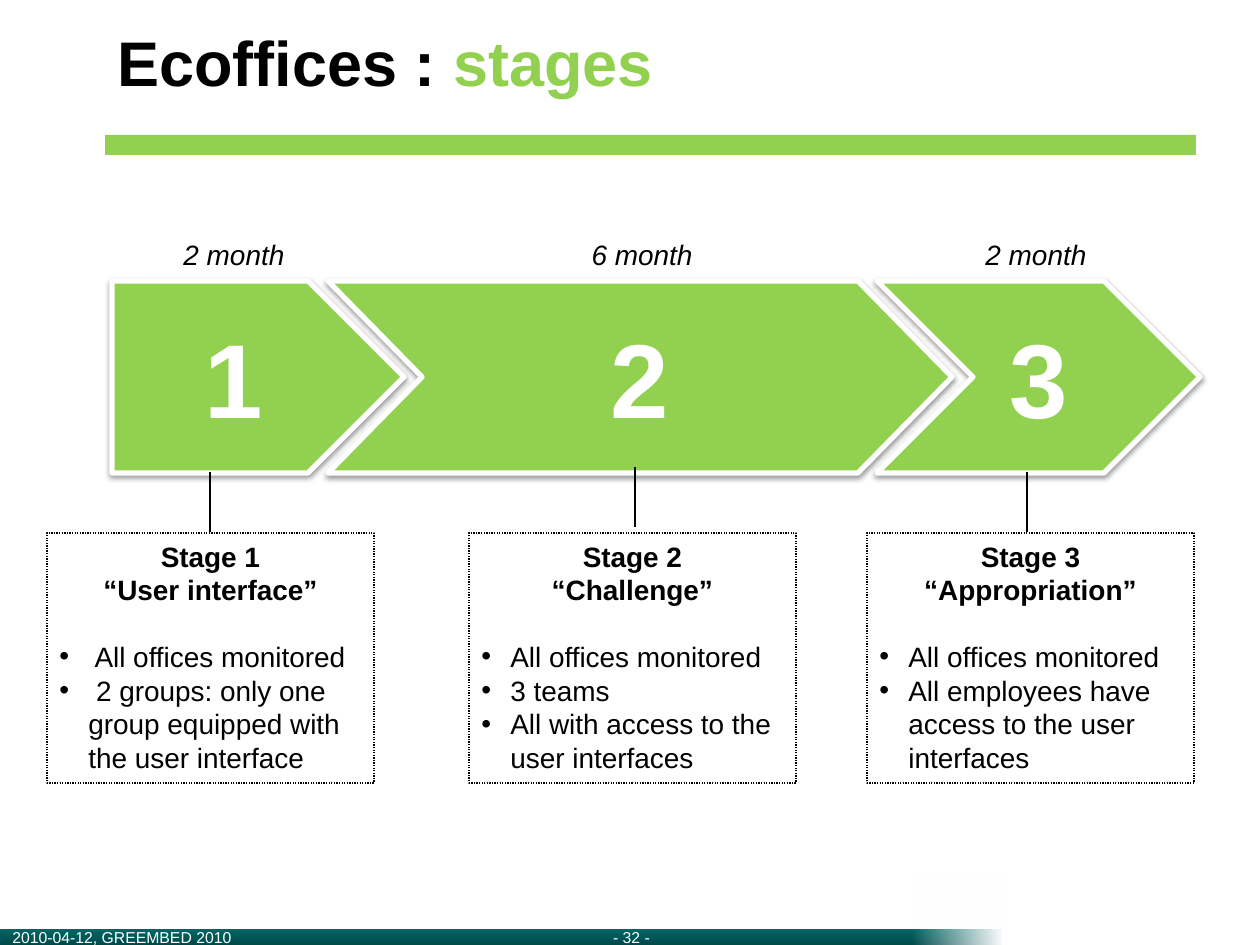
import pptx
import pptx.util
import pptx.dml.color
import pptx.enum.dml
import pptx.enum.shapes
import pptx.enum.text
import pptx.oxml
import pptx.oxml.ns

GREEN, WHITE, BLACK = "92D050", "FFFFFF", "000000"
SHAPE = pptx.enum.shapes.MSO_SHAPE
ALIGN = pptx.enum.text.PP_ALIGN
MIDDLE = pptx.enum.text.MSO_ANCHOR.MIDDLE
NAMESPACE = pptx.oxml.ns.nsdecls("a")

TITLE = [("Ecoffices : ", BLACK), ("stages", GREEN)]
FOOTER = "2010-04-12, GREEMBED 2010\t- 32 -"
STAGES = [
    {"number": "1", "duration": "2 month", "name": "“User interface”",
     "outline": SHAPE.PENTAGON, "adjust": 0.5, "arrow": (112, 292),
     "duration_center": 234, "link": (210, 472), "card_left": 47,
     "points": [" All offices monitored",
                " 2 groups: only one group equipped with the user interface"]},
    {"number": "2", "duration": "6 month", "name": "“Challenge”",
     "outline": SHAPE.CHEVRON, "adjust": 0.49, "arrow": (328, 624),
     "duration_center": 642, "link": (635, 467), "card_left": 469,
     "points": ["All offices monitored", "3 teams",
                "All with access to the user interfaces"]},
    {"number": "3", "duration": "2 month", "name": "“Appropriation”",
     "outline": SHAPE.CHEVRON, "adjust": 0.5, "arrow": (877, 323),
     "duration_center": 1036, "link": (1027, 472), "card_left": 867,
     "points": ["All offices monitored",
                "All employees have access to the user interfaces"]},
]
ARROW_TOP, ARROW_HEIGHT = 281, 192
DURATION_TOP, DURATION_WIDTH, DURATION_HEIGHT = 231, 127, 47
CARD_TOP, CARD_WIDTH, CARD_HEIGHT = 533, 327, 250
LINK_LENGTH, BULLET_INDENT = 60, 29


def px(length):
    return pptx.util.Emu(round(length * 914400 / 126))


def color(value):
    return pptx.dml.color.RGBColor.from_string(value)


def add_box(slide, place, outline=SHAPE.RECTANGLE, fill=None):
    box = slide.shapes.add_shape(outline, *map(px, place))
    box.shadow.inherit = False
    box.line.fill.background()
    if fill:
        box.fill.solid()
        box.fill.fore_color.rgb = color(fill)
    else:
        box.fill.background()
    box.text_frame.word_wrap = True
    return box


def add_gradient(slide, place, stops, angle):
    box = add_box(slide, place, fill=WHITE)
    box.fill.gradient()
    box.fill.gradient_angle = angle
    for stop, (position, value) in zip(box.fill.gradient_stops, stops):
        stop.position = position
        stop.color.rgb = color(value)
    return box


def write(para, text, size, fill=BLACK, align=ALIGN.LEFT, **style):
    para.alignment = align
    span = para.add_run()
    span.text = text
    span.font.color.rgb = color(fill)
    values = {"name": "Arial", "size": pptx.util.Pt(size), **style}
    for name, value in values.items():
        setattr(span.font, name, value)


def add_soft_shadow(box):
    effects = box._element.spPr.find(pptx.oxml.ns.qn("a:effectLst"))
    effects.append(pptx.oxml.parse_xml(
        f'<a:outerShdw {NAMESPACE} blurRad="40000" dist="20000" dir="5400000" '
        'rotWithShape="0"><a:srgbClr val="000000"><a:alpha val="38000"/>'
        '</a:srgbClr></a:outerShdw>'))


def set_bullet(para):
    props = para._p.get_or_add_pPr()
    props.set("marL", str(px(BULLET_INDENT)))
    props.set("indent", str(-px(BULLET_INDENT)))
    for tag in ('buFont %s typeface="Arial"', 'buChar %s char="•"'):
        props.append(pptx.oxml.parse_xml(f"<a:{tag % NAMESPACE}/>"))


def add_footer(slide):
    bar = add_gradient(slide, (0, 929, 1126, 16),
                       [(0, "006666"), (1, "004949")], 270)
    bar.text_frame.vertical_anchor = MIDDLE
    para = bar.text_frame.paragraphs[0]
    para._p.get_or_add_pPr().append(pptx.oxml.parse_xml(
        f'<a:tabLst {NAMESPACE}><a:tab pos="{px(619)}" algn="ctr"/></a:tabLst>'))
    write(para, FOOTER, 9, WHITE)
    add_box(slide, (1002, 785, 258, 160), fill=WHITE)
    fade = add_gradient(slide, (912, 874, 91, 71), [(0, WHITE), (1, WHITE)], 0)
    first_color = next(fade._element.spPr.iter(pptx.oxml.ns.qn("a:srgbClr")))
    first_color.append(pptx.oxml.parse_xml(f'<a:alpha {NAMESPACE} val="0"/>'))


def add_title(slide):
    add_box(slide, (105, 135, 1091, 20), fill=GREEN)
    box = slide.shapes.add_textbox(*map(px, (105, 0, 1091, 135)))
    box.text_frame.word_wrap = True
    box.text_frame.vertical_anchor = MIDDLE
    para = box.text_frame.paragraphs[0]
    para.line_spacing = 0.85
    for text, fill in TITLE:
        write(para, text, 36, fill, bold=True)


def add_arrow(slide, stage):
    left, width = stage["arrow"]
    arrow = add_box(slide, (left, ARROW_TOP, width, ARROW_HEIGHT),
                    stage["outline"], GREEN)
    arrow.adjustments[0] = stage["adjust"]
    arrow.line.color.rgb = color(WHITE)
    arrow.line.width = pptx.util.Pt(3)
    add_soft_shadow(arrow)
    arrow.text_frame.vertical_anchor = MIDDLE
    write(arrow.text_frame.paragraphs[0], stage["number"], 60, WHITE,
          ALIGN.CENTER, bold=True)


def add_duration(slide, stage):
    left = stage["duration_center"] - DURATION_WIDTH / 2
    box = slide.shapes.add_textbox(*map(
        px, (left, DURATION_TOP, DURATION_WIDTH, DURATION_HEIGHT)))
    box.text_frame.word_wrap = False
    write(box.text_frame.paragraphs[0], stage["duration"], 16,
          align=ALIGN.CENTER, italic=True)


def add_card(slide, stage):
    card = add_box(slide, (stage["card_left"], CARD_TOP, CARD_WIDTH, CARD_HEIGHT))
    card.line.color.rgb = color(BLACK)
    card.line.width = pptx.util.Pt(0.75)
    card.line.dash_style = pptx.enum.dml.MSO_LINE.ROUND_DOT
    frame = card.text_frame
    frame.vertical_anchor = pptx.enum.text.MSO_ANCHOR.TOP
    write(frame.paragraphs[0], "Stage " + stage["number"], 16,
          align=ALIGN.CENTER, bold=True)
    write(frame.add_paragraph(), stage["name"], 16, align=ALIGN.CENTER, bold=True)
    for index, point in enumerate(stage["points"]):
        para = frame.add_paragraph()
        set_bullet(para)
        if index == 0:
            para.space_before = pptx.util.Pt(19)
        write(para, point, 16)


def add_link(slide, stage):
    x, top = stage["link"]
    link = slide.shapes.add_connector(
        pptx.enum.shapes.MSO_CONNECTOR.STRAIGHT,
        *map(px, (x, top + LINK_LENGTH, x, top)))
    link.line.color.rgb = color(BLACK)
    link.line.width = pptx.util.Pt(0.75)
    link._element.spPr.append(pptx.oxml.parse_xml(f"<a:effectLst {NAMESPACE}/>"))


def main():
    deck = pptx.Presentation()
    deck.slide_width, deck.slide_height = px(1260), px(945)
    slide = deck.slides.add_slide(deck.slide_layouts[6])
    add_footer(slide)
    add_title(slide)
    for add_part in (add_arrow, add_duration, add_card, add_link):
        for stage in STAGES:
            add_part(slide, stage)
    deck.save("out.pptx")


if __name__ == "__main__":
    main()
